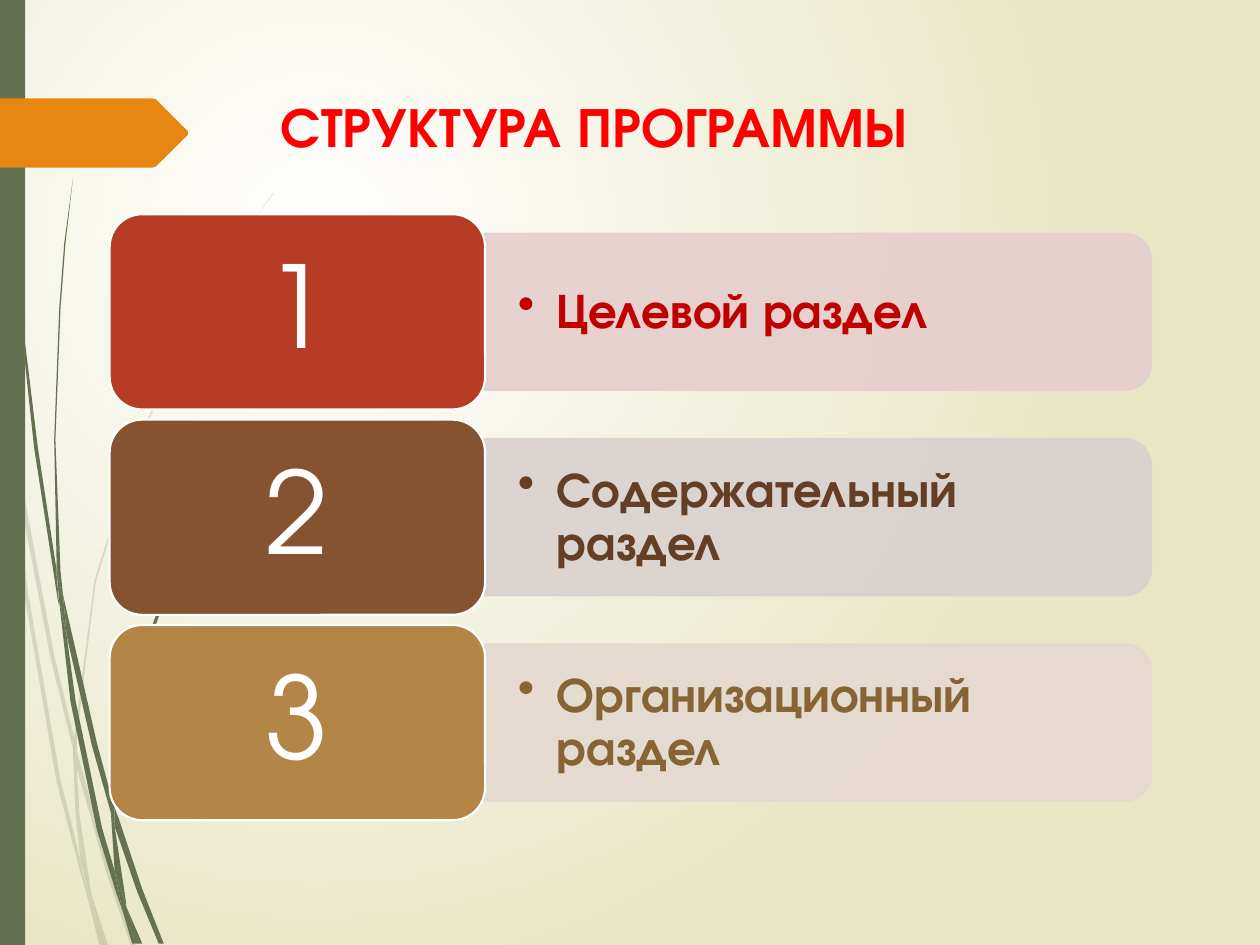
from lxml.etree import SubElement
from pptx import Presentation
from pptx.dml.color import RGBColor
from pptx.enum.shapes import MSO_SHAPE
from pptx.enum.text import MSO_ANCHOR, PP_ALIGN
from pptx.oxml.ns import qn
from pptx.util import Inches, Pt

GREEN, ORANGE, WHITE = "647252", "E78712", "FFFFFF"

# Outlines of the grass blades, in inches
PALE_BLADES = [
    [(0.08, 3.5), (0.06, 3.22), (0, 2.82), (0, 2.99), (0.07, 3.44)],
    [(0.4, 5.22), (0.59, 5.99), (0.59, 5.86), (0.43, 5.2), (0.1, 3.45), (0.12, 3.76)],
    [(0.64, 6.07), (0.61, 5.96), (0.61, 6.1), (0.85, 6.94), (1.04, 7.51), (1.08, 7.51),
     (0.88, 6.92)],
    [(0.83, 7.51), (0.86, 7.51), (0.73, 7.11)],
    [(0.64, 6.83), (0.48, 6.19), (0.22, 4.69), (0.12, 3.76), (0.08, 3.5), (0.19, 4.7),
     (0.45, 6.21), (0.64, 6.93), (0.7, 7.14), (0.69, 7.07)],
    [(0.58, 5.99), (0.6, 6.46), (0.64, 6.83), (0.67, 6.92), (0.73, 7.11), (0.72, 7.06),
     (0.63, 6.46), (0.61, 6.1), (0.61, 6.08)],
    [(0.61, 5.84), (0.76, 4.62), (1.11, 3.49), (1.59, 2.45), (1.87, 1.98), (2.01, 1.75),
     (2.17, 1.54), (2.17, 1.53), (2.01, 1.75), (1.86, 1.97), (1.58, 2.44), (1.1, 3.48),
     (0.75, 4.61), (0.59, 5.84), (0.59, 5.86), (0.61, 5.96)],
    [(0.7, 7.14), (0.79, 7.51), (0.82, 7.51)],
    [(0.61, 6.08), (0.61, 6.1), (0.61, 5.96), (0.59, 5.86), (0.58, 5.99)],
    [(0.67, 6.92), (0.65, 6.83), (0.69, 7.07), (0.7, 7.14), (0.82, 7.51), (0.83, 7.51),
     (0.73, 7.11)],
]
DARK_BLADES = [
    [(0.05, 1.1), (0.14, 2.33), (0.27, 3.55), (0.46, 4.77), (0.47, 4.81), (0.45, 4.57),
     (0.45, 4.53), (0.3, 3.55), (0.15, 2.32), (0.06, 1.09), (0.04, 0.48), (0.03, 0),
     (0.02, 0), (0.03, 0.48)],
    [(0.73, 5.92), (0.88, 6.45), (0.88, 6.33), (0.88, 6.31), (0.77, 5.9), (0.5, 4.72),
     (0.53, 5.05)],
    [(0.94, 6.49), (0.91, 6.41), (0.91, 6.56), (1.09, 7.08), (1.26, 7.49), (1.3, 7.49),
     (1.13, 7.06)],
    [(0.91, 6.91), (0.81, 6.57), (0.6, 5.56), (0.53, 5.05), (0.47, 4.77), (0.56, 5.57),
     (0.77, 6.59), (0.92, 7.08), (0.97, 7.22), (0.96, 7.17)],
    [(0.5, 4.72), (0.48, 4.53), (0.44, 3.49), (0.48, 2.45), (0.52, 1.93), (0.58, 1.41),
     (0.51, 1.93), (0.47, 2.45), (0.43, 3.49), (0.45, 4.49), (0.49, 4.72)],
    [(1.1, 7.49), (1.13, 7.49), (1, 7.19)],
    [(0.47, 4.77), (0.53, 5.05), (0.5, 4.72), (0.49, 4.72), (0.45, 4.49), (0.45, 4.53)],
    [(0.91, 6.33), (1.03, 5.52), (1.31, 4.76), (1.69, 4.06), (1.91, 3.74), (2.03, 3.59),
     (2.16, 3.44), (2.15, 3.44), (2.03, 3.58), (1.91, 3.73), (1.68, 4.05), (1.29, 4.74),
     (1.01, 5.51), (0.88, 6.31), (0.91, 6.41)],
    [(0.97, 7.22), (1.05, 7.49), (1.08, 7.49)],
    [(0.88, 6.45), (0.91, 6.91), (0.96, 7.06), (1, 7.19), (1, 7.16), (0.91, 6.56),
     (0.9, 6.51)],
    [(0.88, 6.45), (0.9, 6.51), (0.91, 6.56), (0.91, 6.41), (0.88, 6.31), (0.88, 6.33)],
    [(0.96, 7.06), (0.91, 6.91), (0.96, 7.17), (0.97, 7.22), (1.08, 7.49), (1.1, 7.49),
     (1, 7.19)],
]
TAG = [(0, 0.78), (1.21, 0.78), (1.24, 0.79), (1.49, 1.04), (1.49, 1.07), (1.24, 1.32),
       (1.21, 1.33), (0, 1.33)]

# Label, card colour, bar colour, label colour
SECTIONS = [
    ("Целевой раздел", "B73C26", "E6CECD", "C00000"),
    ("Содержательный раздел", "865331", "D9D1CE", "643E25"),
    ("Организационный раздел", "B38648", "E5D9CF", "866436"),
]
ROW_PITCH = 1.63


def rgb(value):
    return RGBColor.from_string(value)


def set_alpha(fill_parent, percent):
    color = fill_parent.find(qn("a:solidFill")).find(qn("a:srgbClr"))
    SubElement(color, qn("a:alpha"), val=str(percent * 1000))


def write(tf, text, size, color, bold=False, align=PP_ALIGN.LEFT, anchor=MSO_ANCHOR.MIDDLE,
          spacing=0.9, insets=(0.27, 0.14), font="TeX Gyre Adventor"):
    tf.word_wrap = True
    tf.vertical_anchor = anchor
    tf.margin_left = tf.margin_right = Inches(insets[0])
    tf.margin_top = tf.margin_bottom = Inches(insets[1])
    p = tf.paragraphs[0]
    p.alignment, p.line_spacing = align, spacing
    r = p.add_run()
    r.text = text
    r.font.name, r.font.size, r.font.bold = font, Pt(size), bold
    r.font.color.rgb = rgb(color)
    return p


class Deck:
    line_width = Pt(1.25)

    def __init__(self, prs):
        self.s = prs.slides.add_slide(prs.slide_layouts[5])

    def background(self, inner, outer):
        fill = self.s.background.fill
        fill.gradient()
        for stop, color in zip(fill.gradient_stops, (inner, outer)):
            stop.color.rgb = rgb(color)
        grad = next(self.s.element.iter(qn("a:gradFill")))
        grad.remove(grad.find(qn("a:lin")))
        circle = SubElement(grad, qn("a:path"), path="circle")
        SubElement(circle, qn("a:fillToRect"), l="50000", t="50000", r="100000", b="100000")

    def paint(self, sp, fill, line=None, alpha=None):
        sp.shadow.inherit = False
        sp.fill.solid()
        sp.fill.fore_color.rgb = rgb(fill)
        if line:
            sp.line.color.rgb = rgb(line)
            sp.line.width = self.line_width
        else:
            sp.line.fill.background()
        if alpha:
            props = sp.element.spPr
            set_alpha(props, alpha)
            if line:
                set_alpha(props.find(qn("a:ln")), alpha)
        return sp

    def shape(self, kind, box, fill, line=None, alpha=None):
        sp = self.s.shapes.add_shape(kind, *map(Inches, box))
        return self.paint(sp, fill, line, alpha)

    def outline(self, points, fill, alpha=None):
        start, *rest = [(Inches(x), Inches(y)) for x, y in points]
        builder = self.s.shapes.build_freeform(*start)
        builder.add_line_segments(rest, close=True)
        return self.paint(builder.convert_to_shape(), fill, alpha=alpha)

    def title(self, text, box):
        sp = self.s.shapes.title
        sp.left, sp.top, sp.width, sp.height = map(Inches, box)
        write(sp.text_frame, text, 32, "FF0000", bold=True, anchor=MSO_ANCHOR.TOP,
              spacing=1.0, insets=(0.1, 0.05))

    def bullet(self, text, box, color):
        sp = self.s.shapes.add_textbox(*map(Inches, box))
        p = write(sp.text_frame, text, 28, color, bold=True)
        p.level = 1
        props = p._p.get_or_add_pPr()
        props.set("marL", str(Inches(0.31)))
        props.set("indent", str(-Inches(0.31)))
        SubElement(props, qn("a:buChar"), char="•")

    def section(self, number, text, card_color, bar_color, text_color):
        dy = (number - 1) * ROW_PITCH
        bar = self.shape(MSO_SHAPE.ROUND_2_SAME_RECTANGLE, (5.87, dy - 0.17, 1.24, 5.29),
                         bar_color, line=bar_color, alpha=90)
        bar.rotation = 90
        self.bullet(text, (3.84, 1.92 + dy, 5.23, 1.12), text_color)
        card = self.shape(MSO_SHAPE.ROUNDED_RECTANGLE, (0.87, 1.7 + dy, 2.98, 1.55),
                          card_color, line=WHITE)
        write(card.text_frame, str(number), 65, WHITE, align=PP_ALIGN.CENTER)


def main():
    prs = Presentation()
    prs.slide_width, prs.slide_height = Inches(10), Inches(7.5)
    deck = Deck(prs)

    # Backdrop
    deck.background(WHITE, "E8E6C4")
    for blade in PALE_BLADES:
        deck.outline(blade, GREEN, alpha=20)
    for blade in DARK_BLADES:
        deck.outline(blade, GREEN)
    deck.shape(MSO_SHAPE.RECTANGLE, (0, 0, 0.2, 7.5), GREEN)
    deck.outline(TAG, ORANGE)

    # Title and sections
    deck.title("СТРУКТУРА ПРОГРАММЫ", (2.13, 0.68, 7.21, 1.4))
    for number, section in enumerate(SECTIONS, 1):
        deck.section(number, *section)

    prs.save("out.pptx")


if __name__ == "__main__":
    main()
